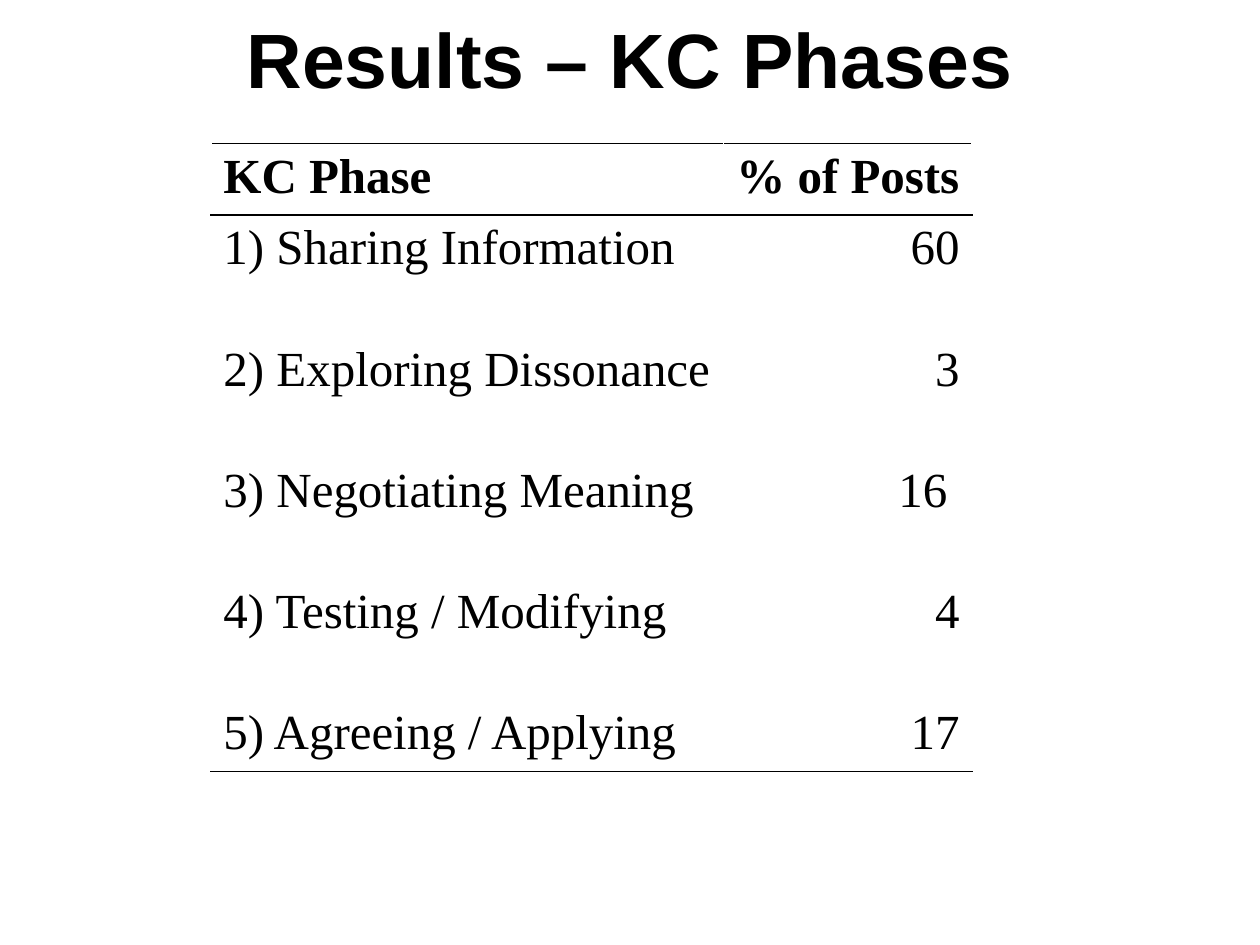
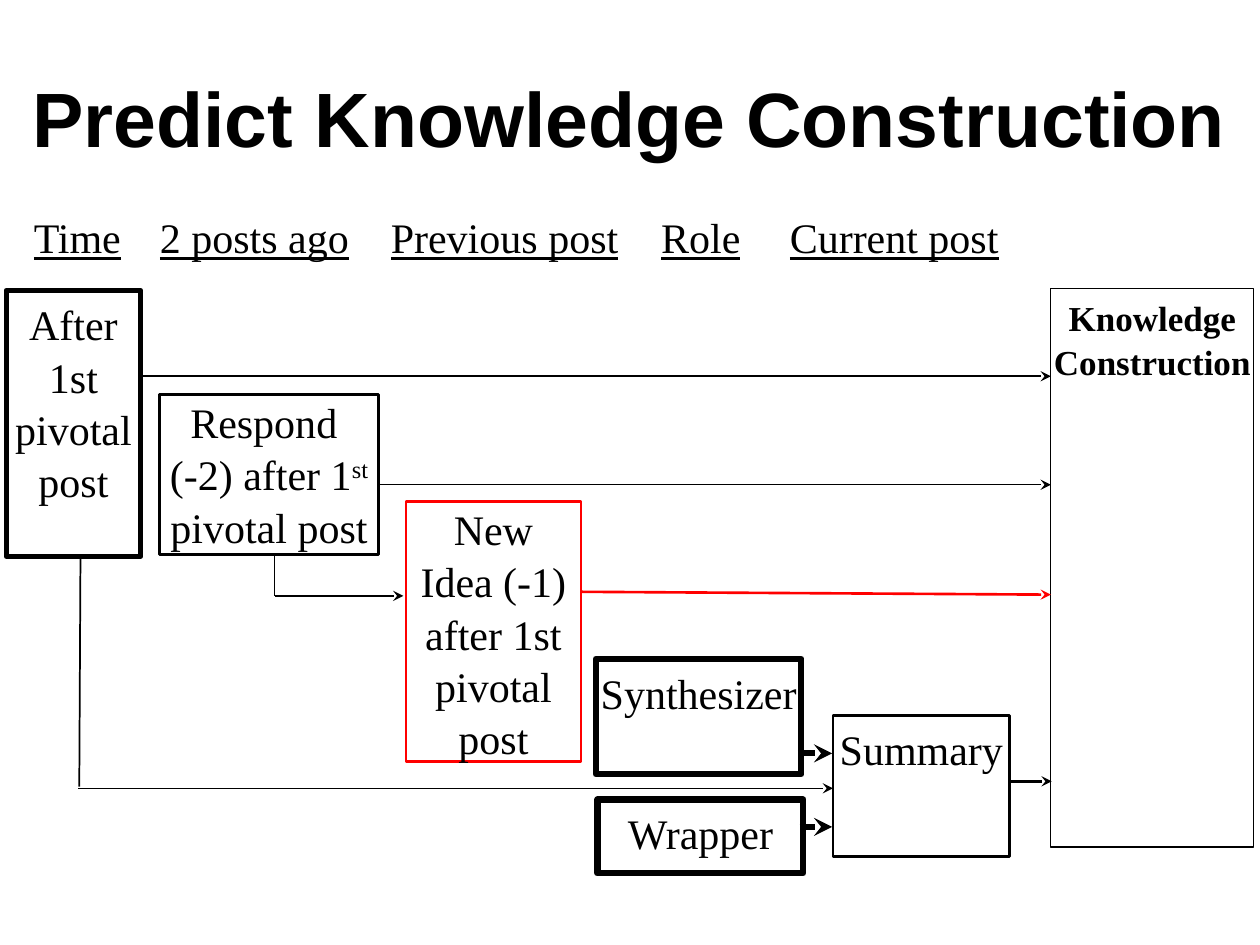
from lxml.etree import SubElement
from pptx import Presentation
from pptx.dml.color import RGBColor
from pptx.enum.shapes import MSO_CONNECTOR, MSO_SHAPE
from pptx.enum.text import MSO_ANCHOR, PP_ALIGN
from pptx.oxml.ns import qn
from pptx.util import Pt

BLACK = RGBColor(0, 0, 0)
WHITE = RGBColor(255, 255, 255)
RED = RGBColor(255, 0, 0)
TITLE_FONT = "Arial"
BODY_FONT = "Times New Roman"

PHASES = [
    ("1) Sharing Information", "60"),
    ("2) Exploring Dissonance", "3"),
    ("3) Negotiating Meaning", "16 "),
    ("4) Testing / Modifying", "4"),
    ("5) Agreeing / Applying", "17"),
]
HEADINGS = ["Time", "2 posts ago", "Previous post", "Role", "Current post"]
HEADING_TABS = [72, 204, 358.5, 432]

FACTORS = [
    (["Knowledge Construction"], 600.5, 165, 116, 319, 0.75, BLACK, 0, 3.6, 20, True),
    (["Summary"], 476, 409, 101, 80.5, 1.5, BLACK, 0, 3.6, 24, False),
    (["After 1st pivotal post"], 3.5, 166, 77, 152, 2.8, BLACK, 0, 3.6, 24, False),
    (["New Idea (-1)", "after 1st pivotal post"],
     232, 286.5, 100, 148.5, 1.6, RED, 4.5, 0, 24, False),
    (["Respond ", "(-2) after 1^st^ pivotal post"],
     91, 225.5, 125.5, 91.5, 1.75, BLACK, 0, 0, 24, False),
    (["Wrapper"], 341.5, 457, 117.5, 42, 3.75, BLACK, 0, 3.6, 24, False),
    (["Synthesizer"], 340.5, 376.5, 117.5, 66, 3.5, BLACK, 0, 3.6, 24, False),
]
LINKS = [
    (577, 446.5, 601, 446.5, 1.5, BLACK, True),
    (80.5, 215, 600.5, 215, 1.25, BLACK, True),
    (332, 338.2, 600.5, 339.8, 1.5, RED, True),
    (157, 340.5, 230.5, 340.5, 0.75, BLACK, True),
    (216.5, 277, 600.5, 277, 0.75, BLACK, True),
    (157, 340.5, 157, 318, 0.75, BLACK, False),
    (456, 430.5, 475.5, 430.5, 3.5, BLACK, True),
    (457, 472.5, 475.5, 472.5, 3.5, BLACK, True),
    (46, 319, 45.3, 449.5, 1, BLACK, False),
    (44.8, 450.5, 476, 450.5, 0.75, BLACK, True),
]


def style(para, size, name=BODY_FONT, bold=False, align=PP_ALIGN.LEFT):
    para.alignment = align
    para.font.name = name
    para.font.size = Pt(size)
    para.font.bold = bold
    para.font.color.rgb = BLACK


def add_title(page, text, left, top, width, height):
    box = page.shapes.add_textbox(Pt(left), Pt(top), Pt(width), Pt(height))
    frame = box.text_frame
    frame.word_wrap = True
    frame.vertical_anchor = MSO_ANCHOR.MIDDLE
    para = frame.paragraphs[0]
    para.text = text
    style(para, 44, TITLE_FONT, True, PP_ALIGN.CENTER)


def set_borders(cell, top, bottom):
    properties = cell._tc.get_or_add_tcPr()
    for side, color in (("L", WHITE), ("R", WHITE), ("T", top), ("B", bottom)):
        border = SubElement(properties, qn(f"a:ln{side}"), w=str(Pt(1)))
        fill = SubElement(border, qn("a:solidFill"))
        SubElement(fill, qn("a:srgbClr"), val=str(color))


def add_phase_table(page):
    rows = [("KC Phase", "% of Posts")] + PHASES
    heights = [38.6] + [69.3] * (len(PHASES) - 1) + [38]
    frame = page.shapes.add_table(len(rows), 2, Pt(120.5), Pt(82), Pt(435), Pt(sum(heights)))
    table = frame.table
    table.first_row = table.horz_banding = False
    for column, width in zip(table.columns, (293, 142)):
        column.width = Pt(width)
    last = len(rows) - 1
    for index, (values, height) in enumerate(zip(rows, heights)):
        table.rows[index].height = Pt(height)
        number_align = PP_ALIGN.RIGHT if index else PP_ALIGN.CENTER
        for column, align in enumerate((PP_ALIGN.LEFT, number_align)):
            cell = table.cell(index, column)
            set_borders(cell, BLACK if index < 2 else WHITE, BLACK if index in (0, last) else WHITE)
            cell.fill.background()
            para = cell.text_frame.paragraphs[0]
            para.text = values[column]
            style(para, 28, bold=index == 0, align=align)


def add_headings(page):
    box = page.shapes.add_textbox(Pt(12.25), Pt(117.5), Pt(584.5), Pt(44))
    box.text_frame.word_wrap = True
    para = box.text_frame.paragraphs[0]
    tabs = SubElement(para._p.get_or_add_pPr(), qn("a:tabLst"))
    for position in HEADING_TABS:
        SubElement(tabs, qn("a:tab"), pos=str(Pt(position)), algn="l")
    style(para, 24)
    for index, heading in enumerate(HEADINGS):
        if index:
            para.add_run().text = "\t"
        span = para.add_run()
        span.text = heading
        span.font.underline = True


def add_factor(page, lines, left, top, width, height, weight, color, side, above, size, bold):
    box = page.shapes.add_shape(MSO_SHAPE.RECTANGLE, Pt(left), Pt(top), Pt(width), Pt(height))
    box.shadow.inherit = False
    box.fill.background()
    box.line.color.rgb = color
    box.line.width = Pt(weight)
    frame = box.text_frame
    frame.word_wrap = True
    frame.vertical_anchor = MSO_ANCHOR.TOP
    frame.margin_left = frame.margin_right = Pt(side)
    frame.margin_top = Pt(above)
    frame.margin_bottom = Pt(0)
    for index, line in enumerate(lines):
        para = frame.add_paragraph() if index else frame.paragraphs[0]
        para.line_spacing = 1.04
        style(para, size, bold=bold, align=PP_ALIGN.CENTER)
        for part, text in enumerate(line.split("^")):
            span = para.add_run()
            span.text = text
            if part % 2:
                span.font._element.set("baseline", "30000")


def add_link(page, x1, y1, x2, y2, weight, color, arrow):
    link = page.shapes.add_connector(MSO_CONNECTOR.STRAIGHT, Pt(x1), Pt(y1), Pt(x2), Pt(y2))
    link.line.color.rgb = color
    link.line.width = Pt(weight)
    if arrow:
        SubElement(link.line._get_or_add_ln(), qn("a:tailEnd"), type="stealth")
    SubElement(link._element.spPr, qn("a:effectLst"))


def main():
    deck = Presentation()
    deck.slide_width, deck.slide_height = Pt(720), Pt(540)
    blank = deck.slide_layouts[6]

    results = deck.slides.add_slide(blank)
    add_title(results, "Results – KC Phases", 36, 0, 648, 66)
    add_phase_table(results)

    prediction = deck.slides.add_slide(blank)
    add_headings(prediction)
    for factor in FACTORS:
        add_factor(prediction, *factor)
    for link in LINKS:
        add_link(prediction, *link)
    add_title(prediction, "Predict Knowledge Construction", 0, 21.5, 720, 90)

    deck.save("out.pptx")


if __name__ == "__main__":
    main()
